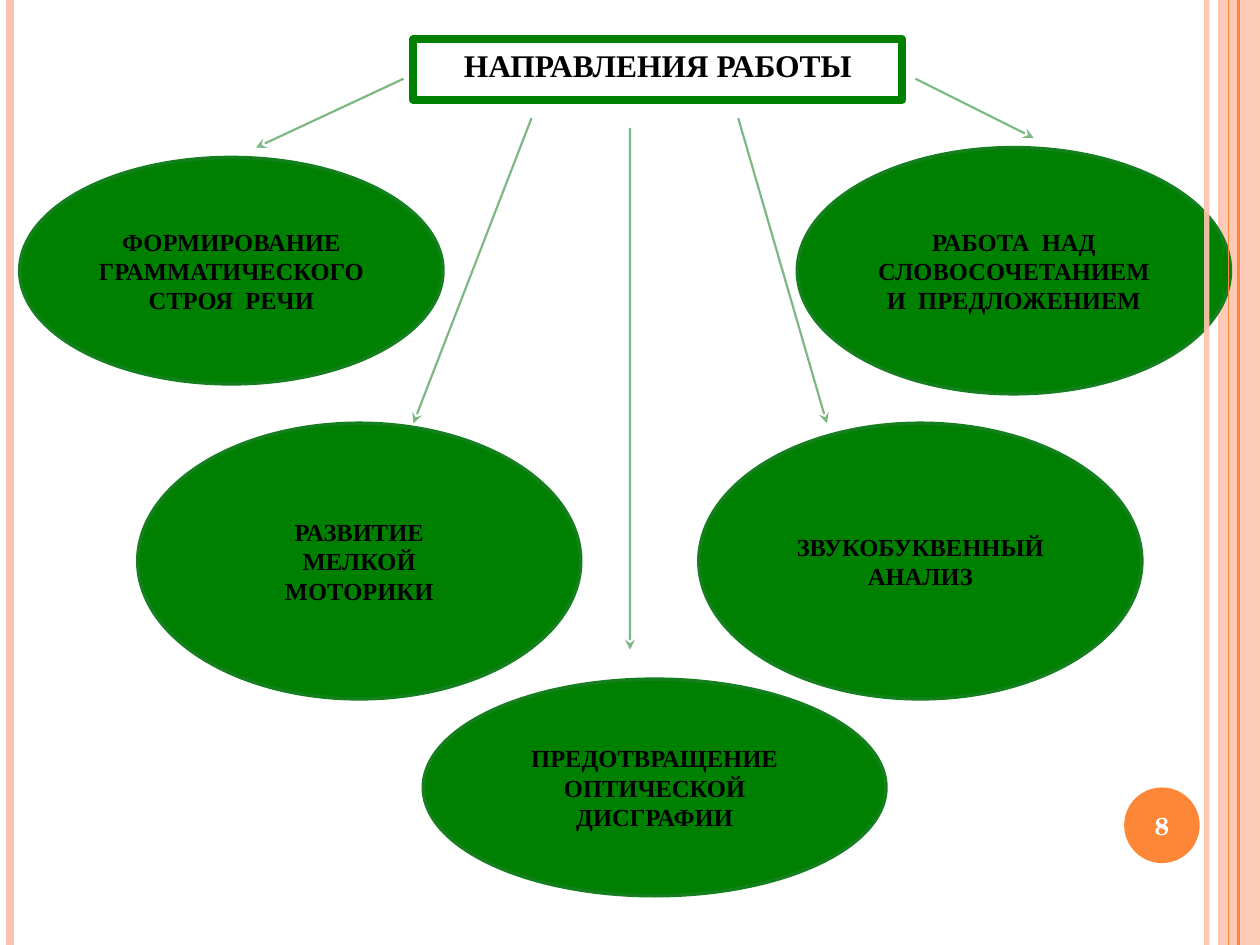
from lxml import etree
from pptx import Presentation, util as u
from pptx.dml.color import RGBColor
from pptx.enum import shapes, text
from pptx.oxml import ns

GREEN, EDGE = "008000", "137F1D"
ORANGE, PEACH = "FE8637", "FEC3AE"

presentation = Presentation()
presentation.slide_width, presentation.slide_height = u.Inches(10), u.Inches(7.5)
slide = presentation.slides.add_slide(presentation.slide_layouts[5])
UNIT = presentation.slide_width / 128  # grid of 128 columns by 96 rows


def paint(fill, colour, opacity=100):
    """Fill solidly with a hex colour, opacity in percent."""
    fill.solid()
    fill.fore_color.rgb = RGBColor.from_string(colour)
    if opacity < 100:
        colour_element = fill._xPr.find(".//" + ns.qn("a:srgbClr"))
        etree.SubElement(colour_element, ns.qn("a:alpha"), val=str(opacity * 1000))


def write(shape, lines, size, colour, font="Times New Roman"):
    """Write centred bold lines, one paragraph each."""
    frame = shape.text_frame
    frame.word_wrap = True
    frame.auto_size = text.MSO_AUTO_SIZE.NONE
    frame.vertical_anchor = text.MSO_ANCHOR.MIDDLE
    frame.text = "\n".join(lines)
    for paragraph in frame.paragraphs:
        paragraph.alignment = text.PP_ALIGN.CENTER
        paragraph.font.name = font
        paragraph.font.size = u.Pt(size)
        paragraph.font.bold = True
        paragraph.font.color.rgb = RGBColor.from_string(colour)


# Shapes: preset, left, top, width, height, fill, opacity, lines of text
rectangle, oval = shapes.MSO_SHAPE.RECTANGLE, shapes.MSO_SHAPE.OVAL
side_band = (rectangle, 123.75, 0, 4.25, 96, PEACH, 87, [])
page_badge = (oval, 114.2, 80, 7.68, 7.68, ORANGE, 100, ["8"])
directions = [
    (oval, 2, 16, 43, 23, GREEN, 100, ["ФОРМИРОВАНИЕ ГРАММАТИЧЕСКОГО", "СТРОЯ  РЕЧИ"]),
    (oval, 14, 43, 45, 28, GREEN, 100, ["РАЗВИТИЕ", "МЕЛКОЙ", "МОТОРИКИ"]),
    (oval, 81, 15, 44, 25, GREEN, 100, ["РАБОТА  НАД СЛОВОСОЧЕТАНИЕМ И  ПРЕДЛОЖЕНИЕМ"]),
    (oval, 71, 43, 45, 28, GREEN, 100, ["ЗВУКОБУКВЕННЫЙ АНАЛИЗ"]),
    (oval, 43, 69, 47, 22, GREEN, 100, ["ПРЕДОТВРАЩЕНИЕ", "ОПТИЧЕСКОЙ ДИСГРАФИИ"]),
]

# Lines: start column and row, end column and row, colour, width, opacity
stripes = [
    (column, 0, column, 96, colour, width, opacity)
    for column, colour, width, opacity in [
        (122.6, PEACH, 3, 93), (1.05, PEACH, 4.5, 100),
        (125.8, ORANGE, 1.5, 100), (124.8, ORANGE, 0.75, 100),
    ]
]
arrows = [
    (*ends, EDGE, 1.25, 55)
    for ends in [
        (41, 8, 26, 15), (93, 8, 105, 14), (75, 12, 84, 43),
        (54, 12, 42, 43), (64, 13, 64, 66),
    ]
]

for preset, *box, colour, opacity, lines in [side_band, page_badge] + directions:
    shape = slide.shapes.add_shape(preset, *(round(length * UNIT) for length in box))
    shape.shadow.inherit = False
    paint(shape.fill, colour, opacity)
    if colour == GREEN:
        paint(shape.line.fill, EDGE)
        shape.line.width = u.Pt(2)
        write(shape, lines, 14, "000000")
    else:
        shape.line.fill.background()
        if lines:
            write(shape, lines, 14, "FFFFFF", "TeX Gyre Schola")

for *ends, colour, width, opacity in stripes + arrows:
    line = slide.shapes.add_connector(
        shapes.MSO_CONNECTOR.STRAIGHT, *(round(length * UNIT) for length in ends))
    paint(line.line.fill, colour, opacity)
    line.line.width = u.Pt(width)
    properties = line._element.spPr
    etree.SubElement(properties, ns.qn("a:effectLst"))
    if colour == EDGE:
        etree.SubElement(properties.find(ns.qn("a:ln")), ns.qn("a:tailEnd"), type="stealth")

title = slide.shapes.title
title.left, title.top = round(42 * UNIT), round(4 * UNIT)
title.width, title.height = u.Inches(3.88), u.Inches(0.48)
paint(title.fill, "FFFFFF")
paint(title.line.fill, GREEN)
title.line.width = u.Pt(4.5)
write(title, ["НАПРАВЛЕНИЯ РАБОТЫ"], 18, "000000")
title.text_frame.vertical_anchor = text.MSO_ANCHOR.TOP

presentation.save("out.pptx")
